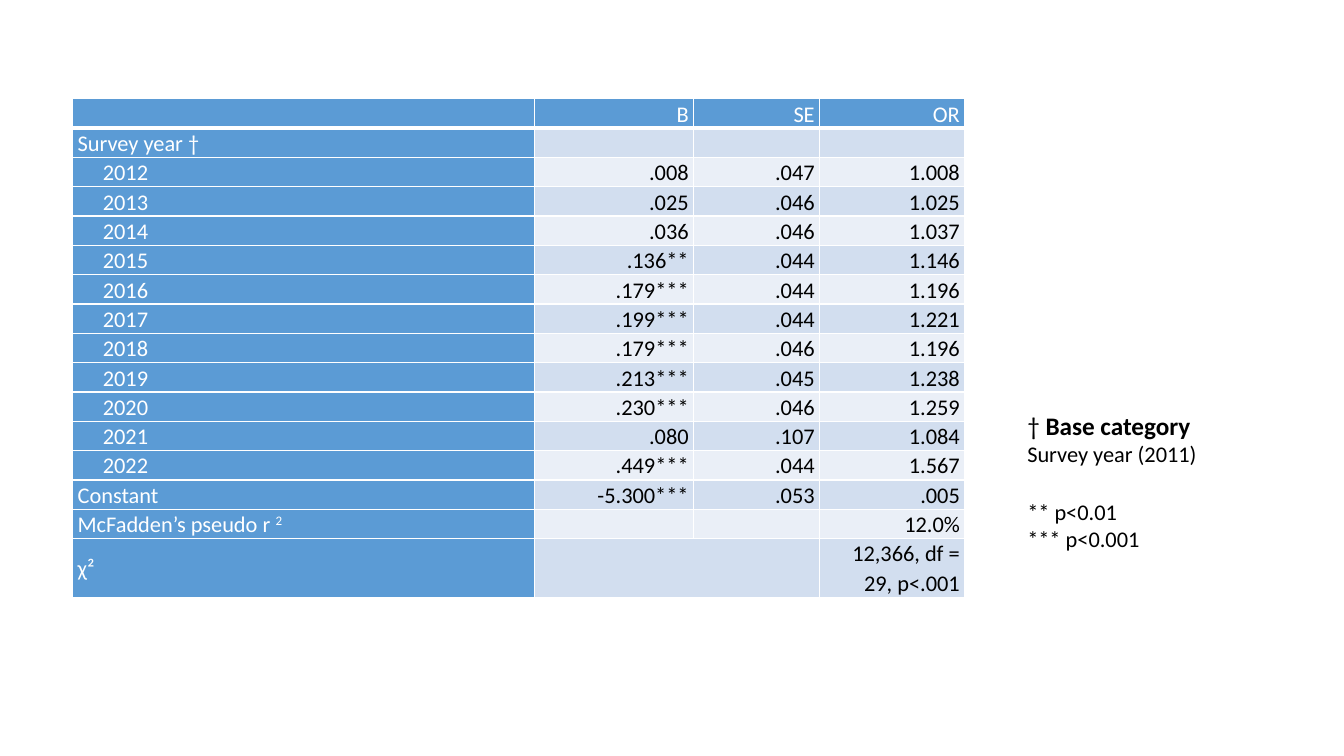
import pptx
import pptx.util
import pptx.dml.color
import pptx.enum.text
import pptx.oxml.ns
import lxml.etree

Inches = pptx.util.Inches
Pt = pptx.util.Pt
qn = pptx.oxml.ns.qn
ALIGN = pptx.enum.text.PP_ALIGN

theme = {
    "font": "Calibri",
    "header": "5B9BD5",
    "bands": ["EAEFF7", "D2DEEF"],
    "white": "FFFFFF",
    "black": "000000",
    "body": 16,
    "heading": 18,
}


def add_run(paragraph, text, size, color, bold=False):
    run = paragraph.add_run()
    run.text = text
    run.font.name = theme["font"]
    run.font.size = Pt(size)
    run.font.bold = bold
    run.font.color.rgb = pptx.dml.color.RGBColor.from_string(color)
    return run


def add_border(cell, side, width):
    properties = cell._tc.get_or_add_tcPr()
    line = lxml.etree.SubElement(properties, qn(f"a:ln{side}"), w=str(Pt(width)))
    fill = lxml.etree.SubElement(line, qn("a:solidFill"))
    lxml.etree.SubElement(fill, qn("a:srgbClr"), val=theme["white"])


presentation = pptx.Presentation()
presentation.slide_width = Inches(13.33)
presentation.slide_height = Inches(7.5)
slide = presentation.slides.add_slide(presentation.slide_layouts[6])

rows = [
    ["", "B", "SE", "OR"],
    ["Survey year †", "", "", ""],
    ["2012", ".008", ".047", "1.008"],
    ["2013", ".025", ".046", "1.025"],
    ["2014", ".036", ".046", "1.037"],
    ["2015", ".136**", ".044", "1.146"],
    ["2016", ".179***", ".044", "1.196"],
    ["2017", ".199***", ".044", "1.221"],
    ["2018", ".179***", ".046", "1.196"],
    ["2019", ".213***", ".045", "1.238"],
    ["2020", ".230***", ".046", "1.259"],
    ["2021", ".080", ".107", "1.084"],
    ["2022", ".449***", ".044", "1.567"],
    ["Constant", "-5.300***", ".053", ".005"],
    ["McFadden’s pseudo r ", "", "", "12.0%"],
    ["χ²", "", "", "12,366, df = 29, p<.001"],
]
column_widths = [4.58, 1.58, 1.25, 1.44]
row_height = 0.29
last_row = len(rows) - 1

table = slide.shapes.add_table(
    len(rows), len(column_widths), Inches(0.72), Inches(0.98),
    Inches(sum(column_widths)), Inches(row_height * (len(rows) + 1)),
).table
for column, width in zip(table.columns, column_widths):
    column.width = Inches(width)
for row in table.rows:
    row.height = Inches(row_height)
table.rows[last_row].height = Inches(2 * row_height)

for row_index, values in enumerate(rows):
    for column_index, text in enumerate(values):
        cell = table.cell(row_index, column_index)
        is_header = row_index == 0 or column_index == 0
        cell.vertical_anchor = pptx.enum.text.MSO_ANCHOR.MIDDLE
        cell.margin_left = Inches(0.3 if text.isdigit() else 0.05)
        cell.margin_right = Inches(0.05)
        cell.margin_top = cell.margin_bottom = 0
        for side in "LRTB":
            add_border(cell, side, 3 if row_index == 0 and side == "B" else 1)
        color = theme["header"] if is_header else theme["bands"][row_index % 2]
        cell.fill.solid()
        cell.fill.fore_color.rgb = pptx.dml.color.RGBColor.from_string(color)
        paragraph = cell.text_frame.paragraphs[0]
        paragraph.alignment = ALIGN.LEFT if column_index == 0 else ALIGN.RIGHT
        paragraph.line_spacing = 1.07
        if text:
            add_run(paragraph, text, theme["body"], theme["white"] if is_header else theme["black"])
        else:
            lxml.etree.SubElement(paragraph._p, qn("a:endParaRPr"), sz=str(theme["body"] * 100))

pseudo_r = table.cell(last_row - 1, 0).text_frame.paragraphs[0]
exponent = add_run(pseudo_r, "2", theme["body"], theme["white"])
exponent._r.get_or_add_rPr().set("baseline", "30000")
table.cell(last_row, 1).merge(table.cell(last_row, 2))

legend = slide.shapes.add_textbox(Inches(10.09), Inches(4.02), Inches(2.99), Inches(1.82)).text_frame
legend.word_wrap = True
heading = legend.paragraphs[0]
add_run(heading, "† ", theme["heading"], theme["black"])
add_run(heading, "Base category", theme["heading"], theme["black"], bold=True)
for text, gap in [("Survey year (2011)", 0), ("** p<0.01", 22), ("*** p<0.001", 0)]:
    paragraph = legend.add_paragraph()
    paragraph.space_before = Pt(gap)
    add_run(paragraph, text, theme["body"], theme["black"])

presentation.save("out.pptx")
